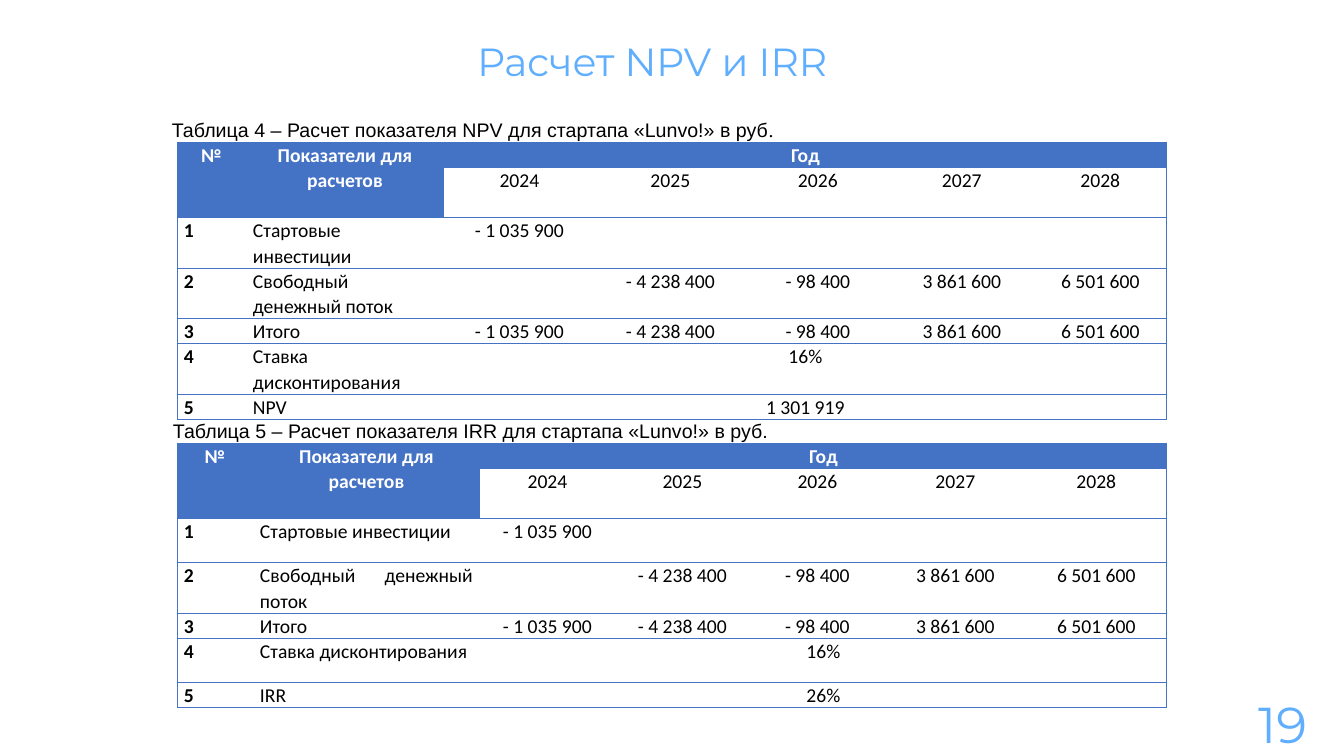
import pptx
import pptx.util
from pptx.dml.color import RGBColor
from pptx.enum.text import MSO_ANCHOR, MSO_AUTO_SIZE, PP_ALIGN
from pptx.oxml import parse_xml
from pptx.oxml.ns import nsdecls

SKY = RGBColor(0x60, 0xAE, 0xFE)
BLUE = RGBColor(0x44, 0x72, 0xC4)
WHITE = RGBColor(0xFF, 0xFF, 0xFF)
BLACK = RGBColor(0x00, 0x00, 0x00)

TITLE = "Расчет NPV и IRR"
PAGE_NUMBER = "19"
YEARS = ("2024", "2025", "2026", "2027", "2028")
HEADINGS = ("№", "Показатели для расчетов", "Год")

# A row with a single value spans all the years.
CASH_ROWS = [
    ("Стартовые инвестиции", ("- 1 035 900", "", "", "", "")),
    ("Свободный денежный поток", ("", "- 4 238 400", "- 98 400", "3 861 600", "6 501 600")),
    ("Итого", ("- 1 035 900", "- 4 238 400", "- 98 400", "3 861 600", "6 501 600")),
    ("Ставка дисконтирования", ("16%",)),
]
CALCULATIONS = [
    {
        "caption": (("Таблица 4 – Расчет показателя NPV для стартапа «Lunvo!» в руб", "Arial"),
                    (".", "Times New Roman")),
        "caption_box": (162, 101, 624, 45),
        "top": 142,
        "columns": (69, 198, 151, 151, 144, 144, 133),
        "rows": CASH_ROWS + [("NPV", ("1 301 919",))],
        "number_align": PP_ALIGN.JUSTIFY,
        "label_align": PP_ALIGN.LEFT,
    },
    {
        "caption": (("Таблица 5 – Расчет показателя IRR для стартапа «Lunvo!» в руб.", "Arial"),),
        "caption_box": (163, 402, 618, 45),
        "top": 443,
        "columns": (76, 227, 135, 135, 135, 141, 141),
        "rows": CASH_ROWS + [("IRR", ("26%",))],
        "number_align": PP_ALIGN.LEFT,
        "label_align": PP_ALIGN.JUSTIFY,
    },
]
TABLE_LEFT = 177
ROW_HEIGHTS = (22, 22, 44, 44, 22, 44, 22)
CELL_INSET = 7


def px(length):
    return round(length * 914400 / 100.8)


def place(shape, box):
    shape.left, shape.top, shape.width, shape.height = map(px, box)


def style(paragraph, font_name, size, color, bold=False):
    font = paragraph.font
    font.name, font.size, font.bold = font_name, pptx.util.Pt(size), bold
    font.color.rgb = color


def write(cell, text, align, color=BLACK, bold=False):
    paragraph = cell.text_frame.paragraphs[0]
    paragraph.text = text
    paragraph.alignment = align
    paragraph.line_spacing = 1.07
    style(paragraph, "Calibri", 14, color, bold)


def set_borders(cell, visible_sides):
    """Draw the named sides (of L, R, T, B) in blue and clear the others."""
    properties = cell._tc.get_or_add_tcPr()
    for position, side in enumerate("LRTB"):
        paint = (f'<a:solidFill><a:srgbClr val="{BLUE}"/></a:solidFill>'
                 if side in visible_sides else "<a:noFill/>")
        properties.insert(position, parse_xml(
            f'<a:ln{side} {nsdecls("a")} w="6350">{paint}</a:ln{side}>'))


def add_caption(slide, runs, box):
    caption = slide.shapes.add_textbox(*map(px, box))
    caption.text_frame.word_wrap = False
    paragraph = caption.text_frame.paragraphs[0]
    paragraph.alignment = PP_ALIGN.JUSTIFY
    paragraph.line_spacing = 1.5
    style(paragraph, "Arial", 14, BLACK)
    for text, font_name in runs:
        run = paragraph.add_run()
        run.text = text
        run.font.name = font_name


def add_calculation(slide, calculation):
    columns = calculation["columns"]
    last_column = len(columns) - 1
    table = slide.shapes.add_table(
        len(ROW_HEIGHTS), len(columns), px(TABLE_LEFT), px(calculation["top"]),
        px(sum(columns)), px(sum(ROW_HEIGHTS))).table
    table.first_row = table.horz_banding = False
    for column, width in zip(table.columns, columns):
        column.width = px(width)

    for c, heading in enumerate(HEADINGS):
        write(table.cell(0, c), heading, PP_ALIGN.CENTER, WHITE, True)
    for c in range(2):
        table.cell(0, c).merge(table.cell(1, c))
    table.cell(0, 2).merge(table.cell(0, last_column))
    for c, year in enumerate(YEARS, 2):
        write(table.cell(1, c), year, PP_ALIGN.CENTER)

    for number, (label, values) in enumerate(calculation["rows"], 1):
        r = number + 1
        write(table.cell(r, 0), str(number), calculation["number_align"], bold=True)
        write(table.cell(r, 1), label, calculation["label_align"])
        for c, value in enumerate(values, 2):
            write(table.cell(r, c), value, PP_ALIGN.CENTER)
        if len(values) == 1:
            table.cell(r, 2).merge(table.cell(r, last_column))

    for r, height in enumerate(ROW_HEIGHTS):
        table.rows[r].height = px(height)
        for c in range(len(columns)):
            cell = table.cell(r, c)
            cell.margin_left = cell.margin_right = px(CELL_INSET)
            cell.margin_top = cell.margin_bottom = 0
            if r == 0 or (r == 1 and c < 2):
                cell.fill.solid()
                cell.fill.fore_color.rgb = BLUE
                set_borders(cell, "LRTB")
            else:
                cell.fill.background()
                reaches_right = c == last_column or cell.is_merge_origin
                set_borders(cell, "TB" + "L" * (c == 0) + "R" * reaches_right)


def main():
    presentation = pptx.Presentation()
    presentation.slide_width, presentation.slide_height = px(1344), px(756)
    slide = presentation.slides.add_slide(presentation.slide_layouts[5])

    title = slide.shapes.title
    place(title, (467, 32, 411, 57))
    title.text_frame.text = TITLE
    title.text_frame.word_wrap = False
    title.text_frame.auto_size = MSO_AUTO_SIZE.NONE
    title.text_frame.vertical_anchor = MSO_ANCHOR.TOP
    heading = title.text_frame.paragraphs[0]
    heading.alignment = PP_ALIGN.LEFT
    style(heading, "Montserrat", 28, SKY)

    page = slide.shapes.add_textbox(*map(px, (1015, 703, 302, 40)))
    page.text_frame.word_wrap = True
    page.text_frame.vertical_anchor = MSO_ANCHOR.MIDDLE
    number = page.text_frame.paragraphs[0]
    number.text = PAGE_NUMBER
    number.alignment = PP_ALIGN.RIGHT
    style(number, "Montserrat", 36, SKY)

    for calculation in CALCULATIONS:
        add_calculation(slide, calculation)
        add_caption(slide, calculation["caption"], calculation["caption_box"])

    presentation.save("out.pptx")


if __name__ == "__main__":
    main()
